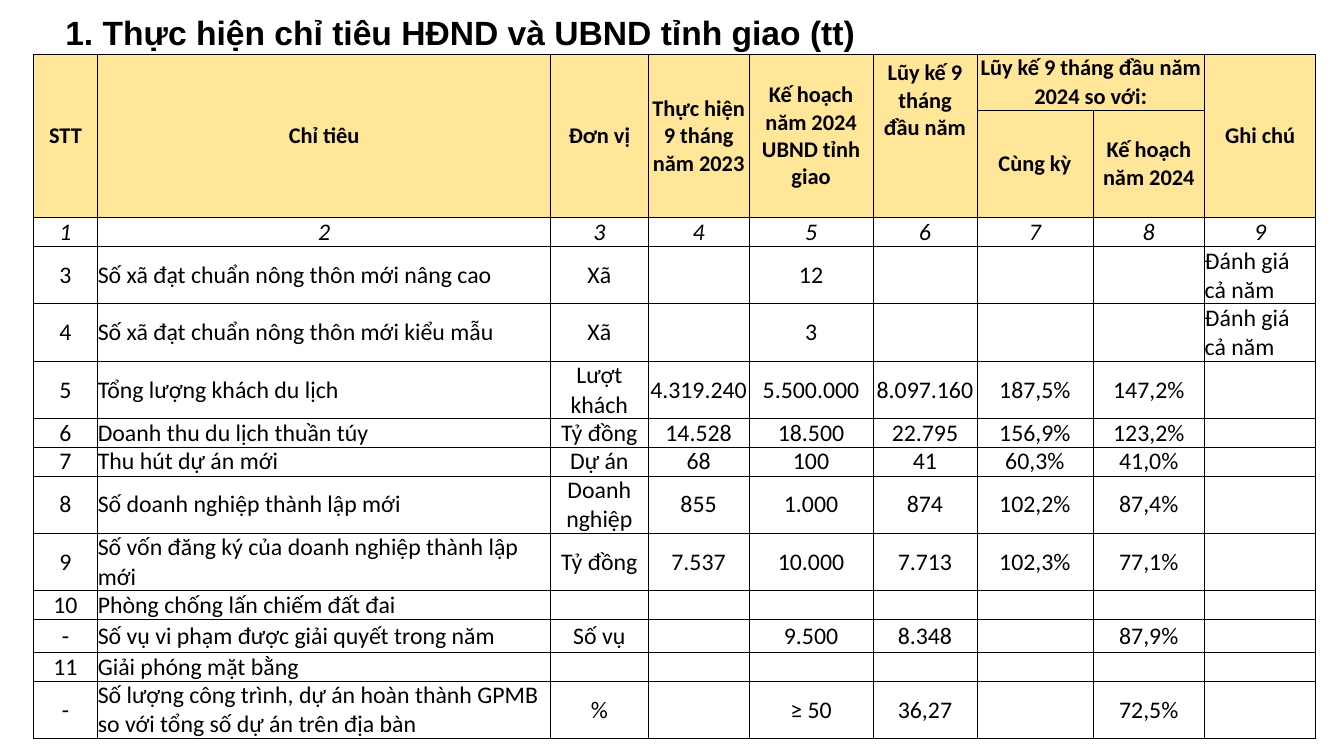
"""Build the slide of provincial targets with its results table."""
from dataclasses import dataclass

from lxml.etree import SubElement
from pptx import Presentation
from pptx.dml.color import RGBColor
from pptx.enum.text import MSO_ANCHOR, MSO_AUTO_SIZE, PP_ALIGN
from pptx.oxml.ns import qn
from pptx.slide import Slide
from pptx.table import Table, _Cell
from pptx.text.text import _Paragraph
from pptx.util import Emu, Pt

EMU_PER_PX = 9144
BLACK = RGBColor(0x00, 0x00, 0x00)
HEADER_YELLOW = RGBColor(0xFF, 0xE6, 0x99)
BORDER_WIDTH = Pt(0.5)

TITLE_FORMAT = {"name": "Arial", "size": Pt(24), "bold": True}
HEADER_FORMAT = {"name": "Calibri", "size": Pt(16), "bold": True}
COLON_FORMAT = {**HEADER_FORMAT, "size": Pt(17)}
BODY_FORMAT = {"name": "Calibri", "size": Pt(17), "bold": False}
NUMBER_FORMAT = {**BODY_FORMAT, "italic": True}
FLUSH_CELL = {"margin_left": 0, "margin_right": 0, "margin_top": 0,
              "margin_bottom": 0, "vertical_anchor": MSO_ANCHOR.MIDDLE}

COLUMN_WIDTHS = (64, 449, 97, 100, 123, 103, 115, 111, 110)
HEADER_HEIGHTS = (55, 107)
LEFT_ALIGNED_COLUMNS = (1, 8)


@dataclass(frozen=True)
class HeaderCell:
    """One heading with its place and span in the two header rows."""

    text: str
    row: int
    column: int
    row_span: int = 1
    column_span: int = 1
    suffix: str = ""
    flush: bool = True


@dataclass(frozen=True)
class TargetRow:
    """One target row with its height in px."""

    height: int
    values: tuple[str, ...]


HEADERS = (
    HeaderCell("STT", 0, 0, 2),
    HeaderCell("Chỉ tiêu", 0, 1, 2),
    HeaderCell("Đơn vị", 0, 2, 2),
    HeaderCell("Thực hiện 9 tháng năm 2023", 0, 3, 2),
    HeaderCell("Kế hoạch năm 2024 UBND tỉnh giao", 0, 4, 2),
    HeaderCell("Lũy kế 9 tháng đầu năm", 0, 5, 2, flush=False),
    HeaderCell("Lũy kế 9 tháng đầu năm 2024 so với", 0, 6, 1, 2, ":"),
    HeaderCell("Ghi chú", 0, 8, 2),
    HeaderCell("Cùng kỳ", 1, 6),
    HeaderCell("Kế hoạch năm 2024", 1, 7),
)
NUMBER_ROW = TargetRow(28, tuple(str(number) for number in range(1, 10)))
TARGET_ROWS = (
    TargetRow(57, ("3", "Số xã đạt chuẩn nông thôn mới nâng cao", "Xã", "",
                   "12", "", "", "", "Đánh giá cả năm")),
    TargetRow(57, ("4", "Số xã đạt chuẩn nông thôn mới kiểu mẫu", "Xã", "",
                   "3", "", "", "", "Đánh giá cả năm")),
    TargetRow(57, ("5", "Tổng lượng khách du lịch", "Lượt khách", "4.319.240",
                   "5.500.000", "8.097.160", "187,5%", "147,2%", "")),
    TargetRow(28, ("6", "Doanh thu du lịch thuần túy", "Tỷ đồng", "14.528",
                   "18.500", "22.795", "156,9%", "123,2%", "")),
    TargetRow(28, ("7", "Thu hút dự án mới", "Dự án", "68",
                   "100", "41", "60,3%", "41,0%", "")),
    TargetRow(57, ("8", "Số doanh nghiệp thành lập mới", "Doanh nghiệp", "855",
                   "1.000", "874", "102,2%", "87,4%", "")),
    TargetRow(57, ("9", "Số vốn đăng ký của doanh nghiệp thành lập mới",
                   "Tỷ đồng", "7.537", "10.000", "7.713", "102,3%", "77,1%", "")),
    TargetRow(28, ("10", "Phòng chống lấn chiếm đất đai",
                   "", "", "", "", "", "", "")),
    TargetRow(33, ("-", "Số vụ vi phạm được giải quyết trong năm", "Số vụ", "",
                   "9.500", "8.348", "", "87,9%", "")),
    TargetRow(28, ("11", "Giải phóng mặt bằng", "", "", "", "", "", "", "")),
    TargetRow(57, ("-", "Số lượng công trình, dự án hoàn thành GPMB "
                   "so với tổng số dự án trên địa bàn", "%", "",
                   "≥ 50", "36,27", "", "72,5%", "")),
)


def px(length: int) -> Emu:
    """Turn px into EMU."""
    return Emu(length * EMU_PER_PX)


def set_attributes(target: object, values: dict[str, object]) -> None:
    """Set every named attribute on the target."""
    for name, value in values.items():
        setattr(target, name, value)


def add_text(paragraph: _Paragraph, text: str, font_format: dict[str, object]) -> None:
    """Add a black run, or give an empty paragraph its text size."""
    if not text:
        end = SubElement(paragraph._p, qn("a:endParaRPr"))
        end.set("sz", str(int(font_format["size"].pt * 100)))
        return
    run = paragraph.add_run()
    run.text = text
    set_attributes(run.font, font_format)
    run.font.color.rgb = BLACK


def add_borders(cell: _Cell) -> None:
    """Draw a thin black line on the four sides of a cell."""
    properties = cell._tc.get_or_add_tcPr()
    for side in ("a:lnL", "a:lnR", "a:lnT", "a:lnB"):
        line = SubElement(properties, qn(side), w=str(BORDER_WIDTH))
        fill = SubElement(line, qn("a:solidFill"))
        SubElement(fill, qn("a:srgbClr"), val=str(BLACK))


def add_title(slide: Slide) -> None:
    """Add the slide title."""
    shape = slide.shapes.add_textbox(px(55), px(7), px(876), px(50))
    set_attributes(shape.text_frame,
                   {"word_wrap": True, "auto_size": MSO_AUTO_SIZE.SHAPE_TO_FIT_TEXT})
    add_text(shape.text_frame.paragraphs[0],
             "1. Thực hiện chỉ tiêu HĐND và UBND tỉnh giao (tt)", TITLE_FORMAT)


def fill_header(table: Table, header: HeaderCell) -> None:
    """Merge and write one heading."""
    cell = table.cell(header.row, header.column)
    if header.row_span * header.column_span > 1:
        cell.merge(table.cell(header.row + header.row_span - 1,
                              header.column + header.column_span - 1))
    if header.flush:
        set_attributes(cell, FLUSH_CELL)
    paragraph = cell.text_frame.paragraphs[0]
    paragraph.alignment = PP_ALIGN.CENTER
    add_text(paragraph, header.text, HEADER_FORMAT)
    if header.suffix:
        add_text(paragraph, header.suffix, COLON_FORMAT)


def fill_row(table: Table, row_index: int, target: TargetRow) -> None:
    """Write the values of one row below the header."""
    is_number_row = target is NUMBER_ROW
    for column, value in enumerate(target.values):
        cell = table.cell(row_index, column)
        set_attributes(cell, FLUSH_CELL)
        paragraph = cell.text_frame.paragraphs[0]
        is_left = column in LEFT_ALIGNED_COLUMNS and not is_number_row
        paragraph.alignment = PP_ALIGN.LEFT if is_left else PP_ALIGN.CENTER
        add_text(paragraph, value, NUMBER_FORMAT if is_number_row else BODY_FORMAT)


def add_target_table(slide: Slide) -> None:
    """Add the table of targets."""
    body = (NUMBER_ROW, *TARGET_ROWS)
    heights = (*HEADER_HEIGHTS, *(target.height for target in body))
    table = slide.shapes.add_table(
        len(heights), len(COLUMN_WIDTHS), px(33), px(54),
        px(sum(COLUMN_WIDTHS)), px(sum(heights))).table
    set_attributes(table, {"first_row": False, "horz_banding": False})
    for column, width in zip(table.columns, COLUMN_WIDTHS):
        column.width = px(width)
    for row_index, height in enumerate(heights):
        row = table.rows[row_index]
        row.height = px(height)
        for cell in row.cells:
            add_borders(cell)
            if row_index < len(HEADER_HEIGHTS):
                cell.fill.solid()
                cell.fill.fore_color.rgb = HEADER_YELLOW
            else:
                cell.fill.background()
    for header in HEADERS:
        fill_header(table, header)
    for row_index, target in enumerate(body, len(HEADER_HEIGHTS)):
        fill_row(table, row_index, target)


def main() -> None:
    """Build and save the presentation."""
    presentation = Presentation()
    set_attributes(presentation, {"slide_width": px(1333), "slide_height": px(750)})
    slide = presentation.slides.add_slide(presentation.slide_layouts[6])
    add_title(slide)
    add_target_table(slide)
    presentation.save("out.pptx")


if __name__ == "__main__":
    main()
